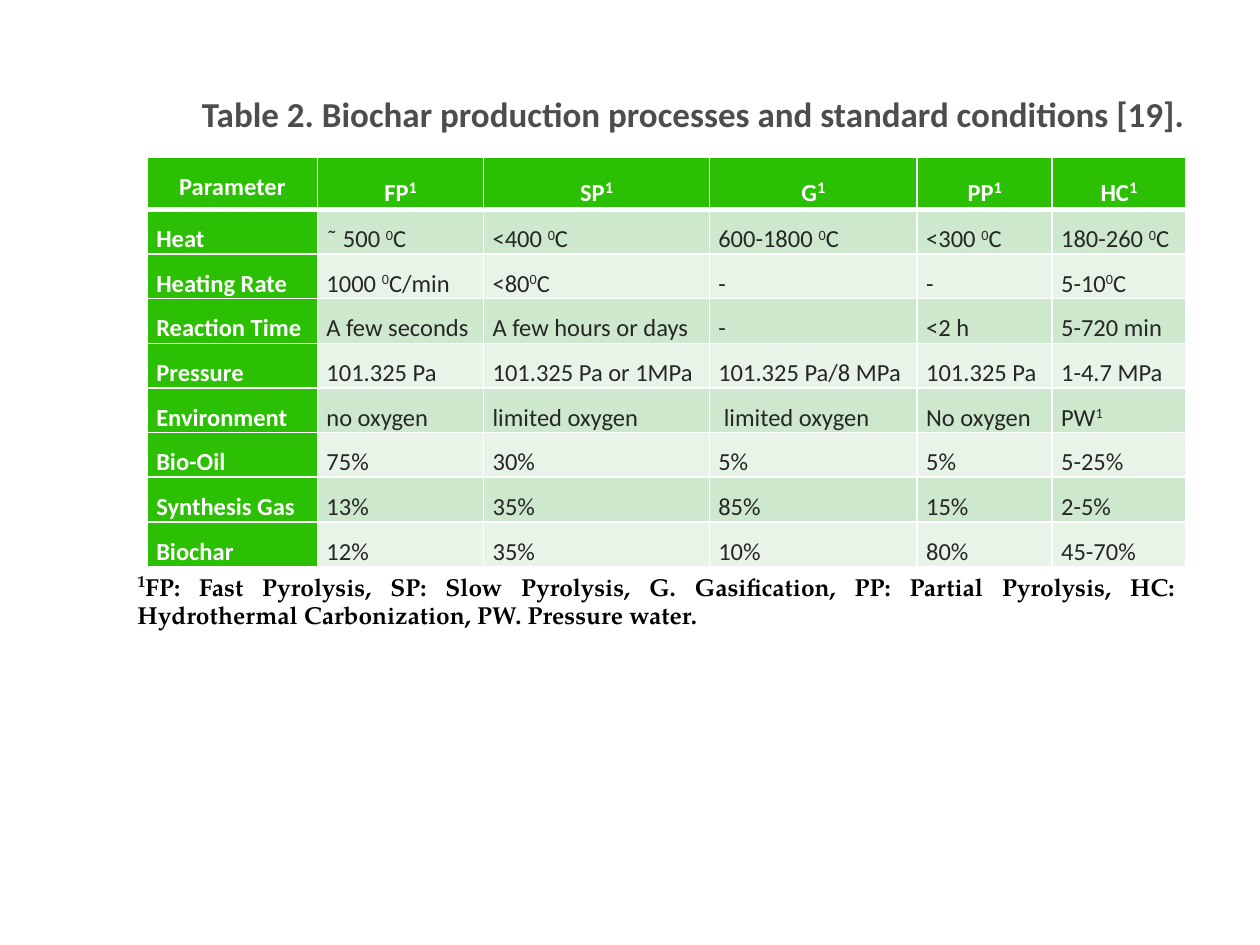
from dataclasses import dataclass

import pptx
import pptx.dml.color
import pptx.enum.text
import pptx.oxml
import pptx.oxml.ns
import pptx.util

Cm, Pt = pptx.util.Cm, pptx.util.Pt
RGB = pptx.dml.color.RGBColor
ALIGN = pptx.enum.text.PP_ALIGN
ANCHOR = pptx.enum.text.MSO_ANCHOR

WHITE = RGB(0xFF, 0xFF, 0xFF)
BLACK = RGB(0x00, 0x00, 0x00)
GREY = RGB(0x4D, 0x4D, 0x4D)
INK = RGB(0x26, 0x26, 0x26)
GREEN = RGB(0x2C, 0xC0, 0x04)
MINT = RGB(0xCD, 0xE8, 0xCC)
PALE = RGB(0xE8, 0xF4, 0xE7)


@dataclass(frozen=True)
class Style:
    size: float
    color: RGB
    bold: bool
    align: int
    face: str = "Calibri"
    sup: float = 0  # size of raised text, 0 for the same size


@dataclass(frozen=True)
class Box:
    left: float
    top: float
    width: float
    height: float
    text: str
    style: Style


TITLE = Style(20, GREY, True, ALIGN.CENTER)
HEAD = Style(14, WHITE, True, ALIGN.CENTER, sup=16)
LABEL = Style(14, WHITE, True, ALIGN.JUSTIFY)
BODY = Style(14, INK, False, ALIGN.JUSTIFY)
NOTE = Style(14, BLACK, True, ALIGN.JUSTIFY, "TeX Gyre Pagella", 16)

# Text between carets is raised
ROWS = [
    ["Parameter", "FP^1^", "SP^1^", "G^1^", "PP^1^", "HC^1^"],
    ["Heat", "˜ 500 ^0^C", "<400 ^0^C", "600-1800 ^0^C", "<300 ^0^C", "180-260 ^0^C"],
    ["Heating Rate", "1000 ^0^C/min", "<80^0^C", "-", "-", "5-10^0^C"],
    ["Reaction Time", "A few seconds", "A few hours or days", "-", "<2 h", "5-720 min"],
    ["Pressure", "101.325 Pa", "101.325 Pa or 1MPa", "101.325 Pa/8 MPa",
     "101.325 Pa", "1-4.7 MPa"],
    ["Environment", "no oxygen", "limited oxygen", " limited oxygen", "No oxygen", "PW^1^"],
    ["Bio-Oil", "75%", "30%", "5%", "5%", "5-25%"],
    ["Synthesis Gas", "13%", "35%", "85%", "15%", "2-5%"],
    ["Biochar", "12%", "35%", "10%", "80%", "45-70%"],
]
COLS = [3.43, 3.35, 4.55, 4.19, 2.72, 2.69]
HEAD_H, ROW_H = 1.04, 0.9


def write(para, text: str, style: Style, **form) -> None:
    """Fill a paragraph, raising the parts between carets."""
    for key, val in {"alignment": style.align, **form}.items():
        setattr(para, key, val)
    for i, part in enumerate(text.split("^")):
        if not part:
            continue
        run = para.add_run()
        run.text = part
        high = i % 2 == 1
        size = style.sup if high and style.sup else style.size
        look = {"name": style.face, "size": Pt(size), "bold": style.bold}
        for key, val in look.items():
            setattr(run.font, key, val)
        run.font.color.rgb = style.color
        if high:
            run._r.get_or_add_rPr().set("baseline", "30000")


def add_box(slide, box: Box, **form):
    shape = slide.shapes.add_textbox(
        *map(Cm, (box.left, box.top, box.width, box.height)))
    shape.text_frame.word_wrap = True
    write(shape.text_frame.paragraphs[0], box.text, box.style, **form)
    return shape


def edge(cell, row: int) -> None:
    """Draw white cell borders, thick below the header."""
    wide = {"L": 1, "R": 1, "T": 3 if row == 1 else 1, "B": 3 if row == 0 else 1}
    props = cell._tc.get_or_add_tcPr()
    for i, (side, pts) in enumerate(wide.items()):
        line = pptx.oxml.parse_xml(
            f'<a:ln{side} {pptx.oxml.ns.nsdecls("a")} w="{Pt(pts)}">'
            f'<a:solidFill><a:srgbClr val="{WHITE}"/></a:solidFill></a:ln{side}>')
        props.insert(i, line)


def add_grid(slide, left: float, top: float) -> None:
    high = HEAD_H + ROW_H * (len(ROWS) - 1)
    table = slide.shapes.add_table(
        len(ROWS), len(COLS), Cm(left), Cm(top), Cm(sum(COLS)), Cm(high)).table
    for col, width in zip(table.columns, COLS):
        col.width = Cm(width)
    pads = {"margin_left": Cm(0.18), "margin_right": Cm(0.18),
            "margin_top": 0, "margin_bottom": 0}
    for r, texts in enumerate(ROWS):
        table.rows[r].height = Cm(ROW_H if r else HEAD_H)
        for c, text in enumerate(texts):
            cell = table.cell(r, c)
            for key, val in pads.items():
                setattr(cell, key, val)
            style = HEAD if r == 0 else LABEL if c == 0 else BODY
            cell.fill.solid()
            cell.fill.fore_color.rgb = (
                GREEN if style is not BODY else MINT if r % 2 else PALE)
            edge(cell, r)
            write(cell.text_frame.paragraphs[0], text, style, line_spacing=1.5)


def main() -> None:
    deck = pptx.Presentation()
    deck.slide_width, deck.slide_height = Cm(25.4), Cm(19.05)
    slide = deck.slides.add_slide(deck.slide_layouts[6])

    # Title
    title = add_box(slide, Box(
        2.97, 1.7, 22.02, 1.19,
        "Table 2. Biochar production processes and standard conditions [19].", TITLE))
    title.text_frame.vertical_anchor = ANCHOR.MIDDLE

    # Table of processes
    add_grid(slide, 2.97, 3.18)

    # Footnote, indented to the table
    note = add_box(slide, Box(
        -2.08, 11.38, 26.04, 1.4,
        "^1^FP: Fast Pyrolysis, SP: Slow Pyrolysis, G. Gasification, "
        "PP: Partial Pyrolysis, HC: Hydrothermal Carbonization, PW. Pressure water.",
        NOTE), line_spacing=0.95, space_after=Pt(12))
    para = note.text_frame.paragraphs[0]
    para._p.get_or_add_pPr().set("marL", str(Cm(4.6)))

    deck.save("out.pptx")


if __name__ == "__main__":
    main()
